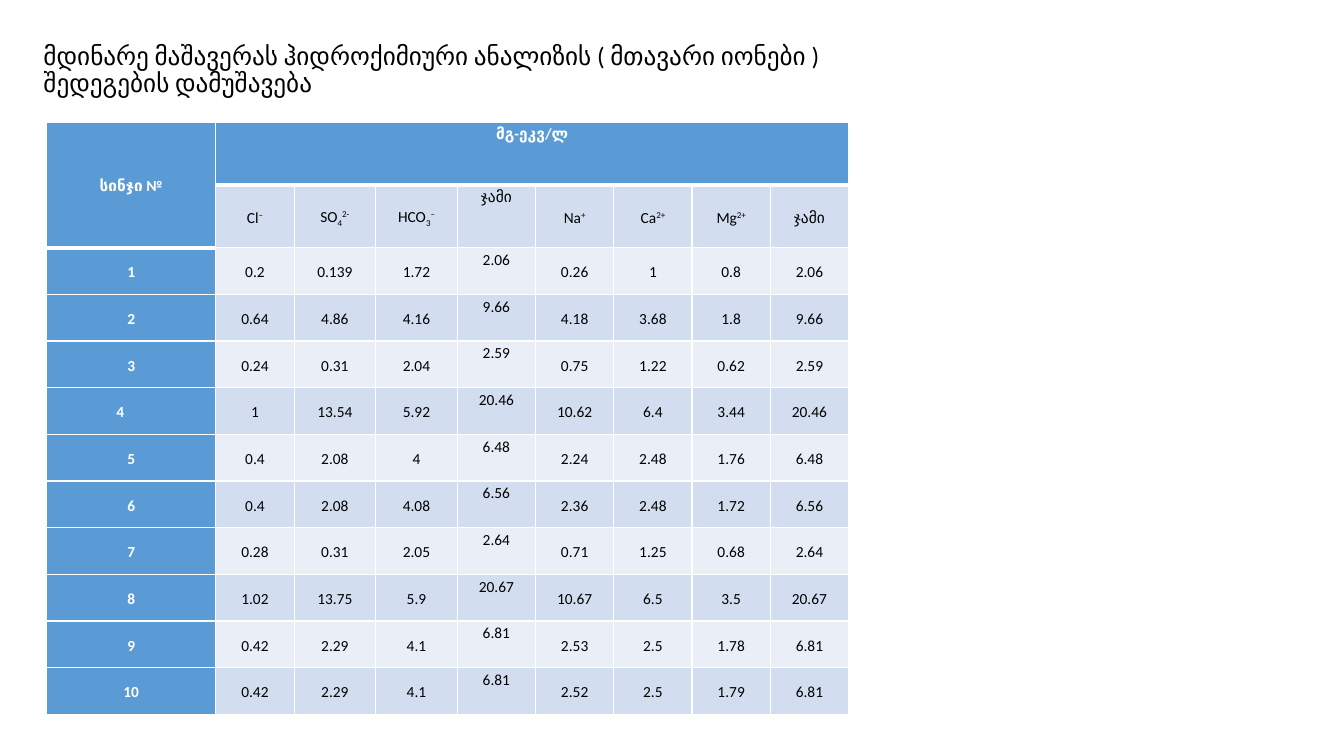
import pptx
import pptx.dml.color
import pptx.enum.text
import pptx.oxml.ns
import pptx.util
from lxml import etree

Pt = pptx.util.Pt
ALIGN = pptx.enum.text.PP_ALIGN
ANCHOR = pptx.enum.text.MSO_ANCHOR

COLORS = {"header": "5B9BD5", "dark_band": "D2DEEF", "light_band": "EAEFF7",
          "white": "FFFFFF", "black": "000000"}
FONT = "Calibri"

TITLE = "მდინარე მაშავერას ჰიდროქიმიური ანალიზის ( მთავარი იონები ) შედეგების დამუშავება"
SUM = "ჯამი"
# Each ion is a list of (text, baseline shift in percent)
IONS = [
    [("Cl", 0), ("–", 30)],
    [("SO", 0), ("4", -25), ("2-", 30)],
    [("HCO", 0), ("3", -25), ("–", 30)],
    SUM,
    [("Na", 0), ("+", 30)],
    [("Ca", 0), ("2+", 30)],
    [("Mg", 0), ("2+", 30)],
    SUM,
]
SAMPLES = [
    ("0.2", "0.139", "1.72", "2.06", "0.26", "1", "0.8", "2.06"),
    ("0.64", "4.86", "4.16", "9.66", "4.18", "3.68", "1.8", "9.66"),
    ("0.24", "0.31", "2.04", "2.59", "0.75", "1.22", "0.62", "2.59"),
    ("1", "13.54", "5.92", "20.46", "10.62", "6.4", "3.44", "20.46"),
    ("0.4", "2.08", "4", "6.48", "2.24", "2.48", "1.76", "6.48"),
    ("0.4", "2.08", "4.08", "6.56", "2.36", "2.48", "1.72", "6.56"),
    ("0.28", "0.31", "2.05", "2.64", "0.71", "1.25", "0.68", "2.64"),
    ("1.02", "13.75", "5.9", "20.67", "10.67", "6.5", "3.5", "20.67"),
    ("0.42", "2.29", "4.1", "6.81", "2.53", "2.5", "1.78", "6.81"),
    ("0.42", "2.29", "4.1", "6.81", "2.52", "2.5", "1.79", "6.81"),
]
COL_WIDTHS = [121, 55.9, 58.3, 58.3] + [55.9] * 5
ROW_HEIGHTS = [44.9] * 2 + [33.36] * len(SAMPLES)
ANION_SUM_COL = 4
INDENTED_SAMPLE = 4


def rgb(name):
    return pptx.dml.color.RGBColor.from_string(COLORS[name])


def put_text(tf, text, size=11, color="black", bold=False, align=ALIGN.CENTER,
             spacing=1.15, after=10, indent=0):
    p = tf.paragraphs[0]
    p.alignment = align
    p.line_spacing = spacing
    p.space_after = Pt(after)
    if indent:
        p._p.get_or_add_pPr().set("marL", str(Pt(indent)))
    for part, shift in [(text, 0)] if isinstance(text, str) else text:
        r = p.add_run()
        r.text = part
        r.font.name = FONT
        r.font.size = Pt(size)
        r.font.bold = bold
        r.font.color.rgb = rgb(color)
        if shift:
            r._r.get_or_add_rPr().set("baseline", str(shift * 1000))


def set_borders(cell, top=1, bottom=1):
    tcPr = cell._tc.get_or_add_tcPr()
    for side, width in (("L", 1), ("R", 1), ("T", top), ("B", bottom)):
        ln = etree.SubElement(tcPr, pptx.oxml.ns.qn("a:ln" + side), w=str(Pt(width)))
        fill = etree.SubElement(ln, pptx.oxml.ns.qn("a:solidFill"))
        etree.SubElement(fill, pptx.oxml.ns.qn("a:srgbClr"), val=COLORS["white"])


def add_title(s, x, y, w, h):
    tf = s.shapes.add_textbox(Pt(x), Pt(y), Pt(w), Pt(h)).text_frame
    tf.word_wrap = True
    tf.vertical_anchor = ANCHOR.MIDDLE
    put_text(tf, TITLE, size=18, align=ALIGN.LEFT, spacing=0.9, after=0)


def add_ion_table(s, x, y, w, h):
    rows = [["სინჯი №", "მგ-ეკვ/ლ"] + [""] * 7, [""] + IONS]
    rows += [[str(n), *values] for n, values in enumerate(SAMPLES, 1)]
    table = s.shapes.add_table(len(rows), len(COL_WIDTHS),
                               Pt(x), Pt(y), Pt(w), Pt(h)).table
    for col, width in zip(table.columns, COL_WIDTHS):
        col.width = Pt(width)
    for row, height in zip(table.rows, ROW_HEIGHTS):
        row.height = Pt(height)

    # Header spans
    table.cell(0, 0).merge(table.cell(1, 0))
    table.cell(0, 1).merge(table.cell(0, len(COL_WIDTHS) - 1))

    # Cells: header row and column, then alternating bands
    for i, row in enumerate(rows):
        for j, text in enumerate(row):
            cell = table.cell(i, j)
            header = i == 0 or j == 0
            # A thick rule closes each header cell
            rule_row = 1 if j == 0 else 0
            set_borders(cell, top=3 if i == rule_row + 1 else 1,
                        bottom=3 if i == rule_row or i == 0 else 1)
            cell.fill.solid()
            band = "dark_band" if i % 2 else "light_band"
            cell.fill.fore_color.rgb = rgb("header" if header else band)
            cell.margin_left = cell.margin_right = Pt(5)
            cell.margin_top = cell.margin_bottom = 0
            at_top = j == ANION_SUM_COL or (i == 0 and j > 0)
            cell.vertical_anchor = ANCHOR.TOP if at_top else ANCHOR.MIDDLE
            if text:
                indented = j == 0 and text == str(INDENTED_SAMPLE)
                put_text(cell.text_frame, text, bold=header,
                         color="white" if header else "black",
                         align=ALIGN.LEFT if indented else ALIGN.CENTER,
                         indent=45 if indented else 0)


def main():
    prs = pptx.Presentation()
    prs.slide_width, prs.slide_height = Pt(960), Pt(540)
    s = prs.slides.add_slide(prs.slide_layouts[6])
    add_title(s, 24, 13.7, 601, 73.4)
    add_ion_table(s, 33.2, 87.2, sum(COL_WIDTHS), sum(ROW_HEIGHTS))
    prs.save("out.pptx")


if __name__ == "__main__":
    main()
